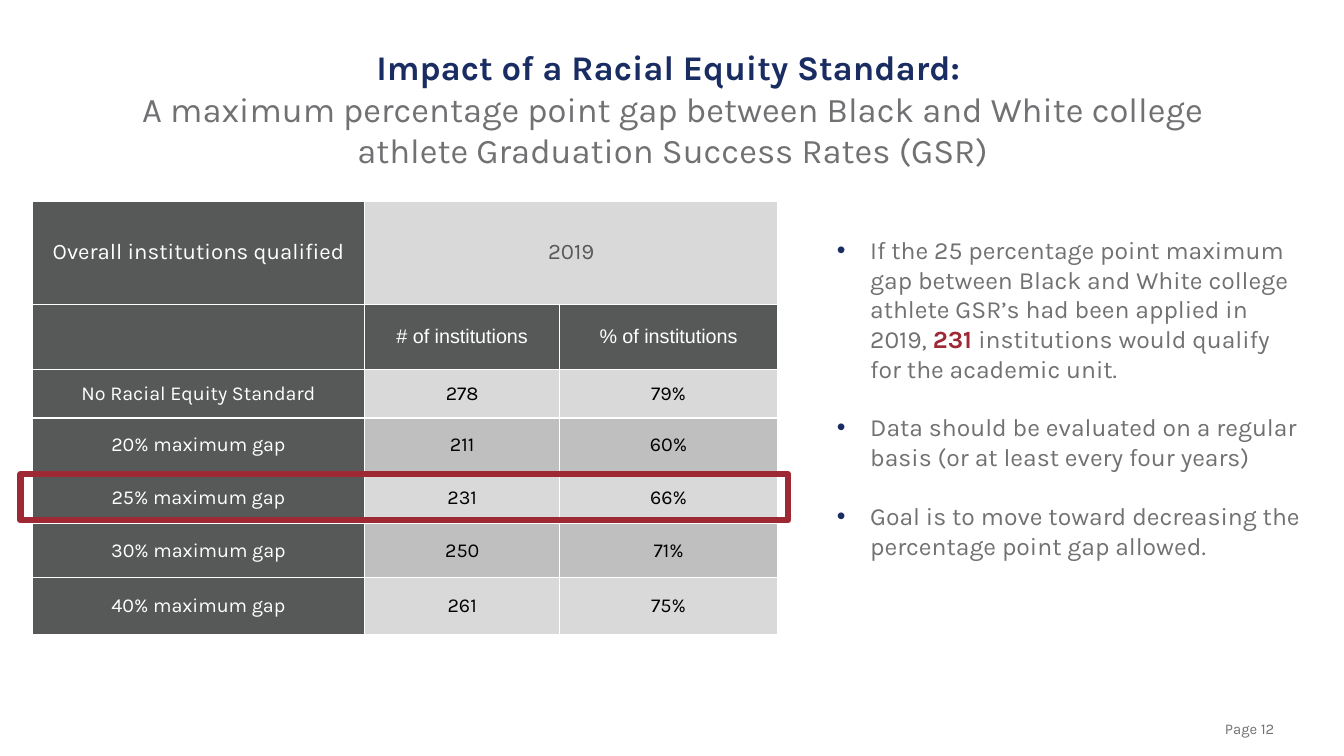
from lxml.etree import SubElement
from pptx import Presentation
from pptx.dml.color import RGBColor
from pptx.enum.shapes import MSO_SHAPE
from pptx.enum.text import MSO_ANCHOR, PP_ALIGN
from pptx.oxml import parse_xml
from pptx.oxml.ns import nsdecls, qn
from pptx.util import Pt

NAVY, RED, GRAY, CHARCOAL = "1A2D63", "9E2834", "717073", "575858"
WHITE, BLACK, LIGHT, MID = "FFFFFF", "000000", "D9D9D9", "BFBFBF"
COLUMNS = [269.3, 157.7, 176.4]
ROWS = [83.5, 53.3, 38.9, 43.9, 41.8, 43.2, 46.1]
RESULTS = [
    ("No Racial Equity Standard", "278", "79%"),
    ("20% maximum gap", "211", "60%"),
    ("25% maximum gap", "231", "66%"),
    ("30% maximum gap", "250", "71%"),
    ("40% maximum gap", "261", "75%"),
]
POINTS = [
    [("If the 25 percentage point maximum gap between Black and White college "
      "athlete GSR’s had been applied in 2019, ", GRAY, False),
     ("231 ", RED, True),
     ("institutions would qualify for the academic unit.", GRAY, False)],
    [("Data should be evaluated on a regular basis (or at least every four years)",
      GRAY, False)],
    [("Goal is to move toward decreasing the percentage point gap allowed.",
      GRAY, False)],
]


def color(hex_code):
    """Turn a hex string into a colour."""
    return RGBColor.from_string(hex_code)


def add_run(paragraph, words, size, hex_code, bold=False, font="Karla"):
    """Append one formatted run to a paragraph."""
    run = paragraph.add_run()
    run.text = words
    run.font.size = Pt(size)
    run.font.name = font
    run.font.bold = bold
    run.font.color.rgb = color(hex_code)


def add_box(slide, left, top, width, height):
    """Add a wrapping text box and return its text frame."""
    frame = slide.shapes.add_textbox(Pt(left), Pt(top), Pt(width), Pt(height)).text_frame
    frame.word_wrap = True
    return frame


def add_title(slide, left, top, width, height):
    """Place the bold heading and its explanation."""
    frame = add_box(slide, left, top, width, height)
    frame.vertical_anchor = MSO_ANCHOR.MIDDLE
    heading, explanation = frame.paragraphs[0], frame.add_paragraph()
    heading.alignment = explanation.alignment = PP_ALIGN.CENTER
    add_run(heading, "Impact of a Racial Equity Standard: ", 28, NAVY, True)
    add_run(explanation, "A maximum percentage point gap between Black and White "
            "college athlete Graduation Success Rates (GSR)", 28, GRAY)


def style_cell(cell, fill, words="", hex_code=WHITE, size=16, font="Karla"):
    """Fill, border and label one table cell."""
    cell.fill.solid()
    cell.fill.fore_color.rgb = color(fill)
    cell.vertical_anchor = MSO_ANCHOR.MIDDLE
    cell.margin_left = cell.margin_right = Pt(8)
    cell.margin_top = cell.margin_bottom = Pt(4)
    properties = cell._tc.get_or_add_tcPr()
    for index, side in enumerate("LRTB"):
        properties.insert(index, parse_xml(
            f'<a:ln{side} {nsdecls("a")} w="{Pt(1)}"><a:solidFill>'
            f'<a:srgbClr val="{WHITE}"/></a:solidFill></a:ln{side}>'))
    if words:
        paragraph = cell.text_frame.paragraphs[0]
        paragraph.alignment = PP_ALIGN.CENTER
        add_run(paragraph, words, size, hex_code, font=font)


def add_results(slide, left, top):
    """Place the table of qualifying institutions and frame the 25% row."""
    table = slide.shapes.add_table(len(ROWS), len(COLUMNS), Pt(left), Pt(top),
                                   Pt(sum(COLUMNS)), Pt(sum(ROWS))).table
    table.first_row = table.horz_banding = False
    for column, width in zip(table.columns, COLUMNS):
        column.width = Pt(width)
    for row, height in zip(table.rows, ROWS):
        row.height = Pt(height)

    table.cell(0, 1).merge(table.cell(0, 2))
    style_cell(table.cell(0, 0), CHARCOAL, "Overall institutions qualified", size=18)
    style_cell(table.cell(0, 1), LIGHT, "2019", CHARCOAL, 18)
    style_cell(table.cell(0, 2), LIGHT)
    for index, header in enumerate(["", "# of institutions", "% of institutions"]):
        style_cell(table.cell(1, index), CHARCOAL, header, font="Arial")
    for index, (standard, *values) in enumerate(RESULTS):
        style_cell(table.cell(index + 2, 0), CHARCOAL, standard)
        for position, value in enumerate(values, 1):
            style_cell(table.cell(index + 2, position), MID if index % 2 else LIGHT,
                       value, BLACK)

    highlight = slide.shapes.add_shape(
        MSO_SHAPE.RECTANGLE, Pt(left - 9.4), Pt(top + sum(ROWS[:4]) + 1.5),
        Pt(sum(COLUMNS) + 18), Pt(37.4))
    highlight.shadow.inherit = False
    highlight.fill.background()
    highlight.line.color.rgb = color(RED)
    highlight.line.width = Pt(5)


def add_points(slide, left, top, width, height):
    """Place the bulleted conclusions."""
    frame = add_box(slide, left, top, width, height)
    for index, pieces in enumerate(POINTS):
        paragraph = frame.add_paragraph() if index else frame.paragraphs[0]
        properties = paragraph._p.get_or_add_pPr()
        properties.set("marL", str(Pt(27)))
        properties.set("indent", str(Pt(-27)))
        bullet_color = SubElement(properties, qn("a:buClr"))
        SubElement(bullet_color, qn("a:srgbClr"), val=NAVY)
        SubElement(properties, qn("a:buFont"), typeface="Arial")
        SubElement(properties, qn("a:buChar"), char="•")
        if index:
            paragraph.space_before = Pt(23.6)
        for words, hex_code, bold in pieces:
            add_run(paragraph, words, 20, hex_code, bold)


def add_page_number(slide, left, top, width, height):
    """Place the page number."""
    page = add_box(slide, left, top, width, height).paragraphs[0]
    page.alignment = PP_ALIGN.CENTER
    add_run(page, "Page 12", 12, GRAY)


def main():
    """Build and save the slide."""
    presentation = Presentation()
    presentation.slide_width, presentation.slide_height = Pt(1087.92), Pt(612)
    slide = presentation.slides.add_slide(presentation.slide_layouts[6])
    add_page_number(slide, 962, 579, 99, 21)
    add_title(slide, 92.9, 35.3, 902.9, 105.1)
    add_results(slide, 26, 162.7)
    add_points(slide, 670.3, 186.5, 391.7, 298)
    presentation.save("out.pptx")


if __name__ == "__main__":
    main()
